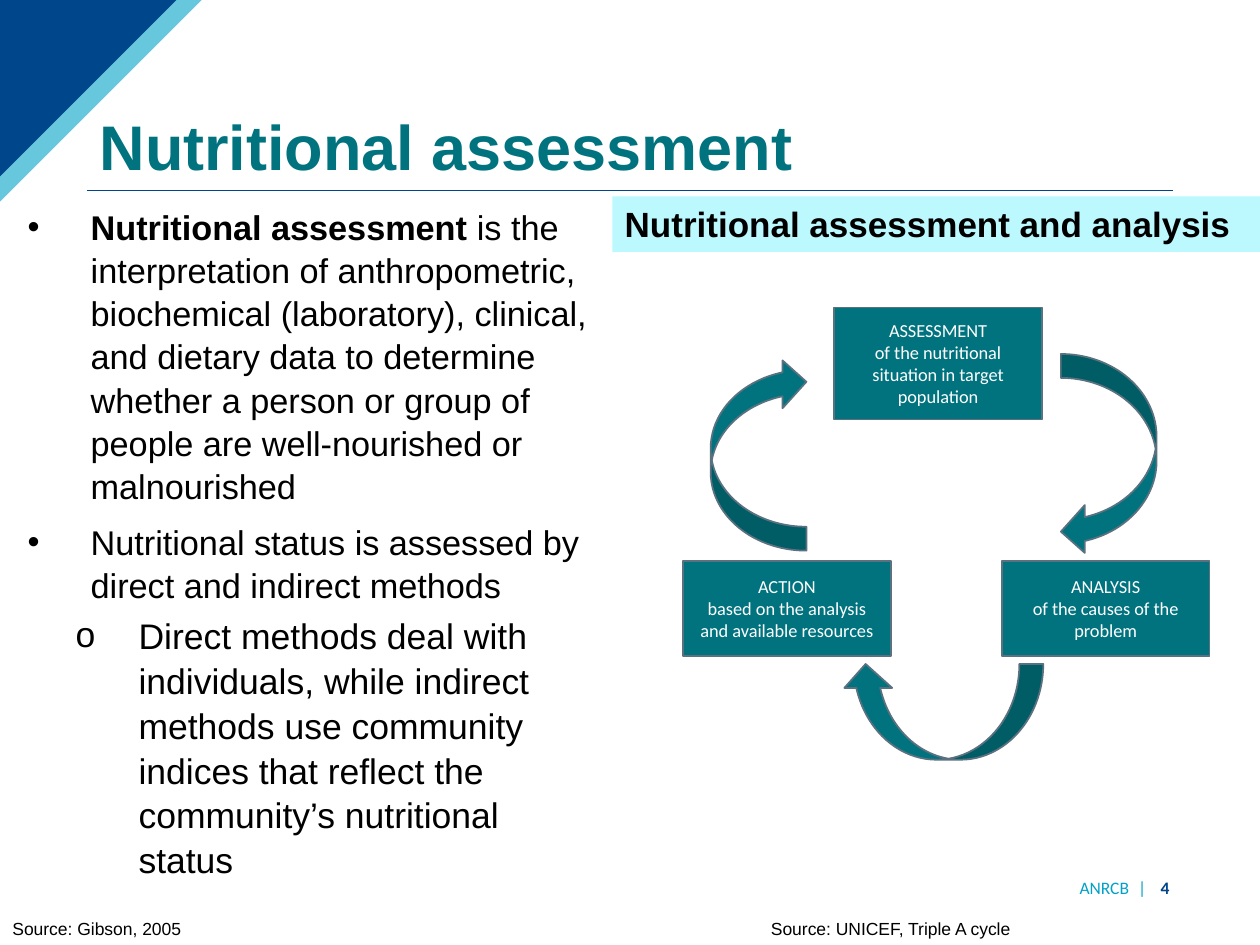
from lxml.etree import SubElement
from pptx import Presentation
from pptx.dml.color import RGBColor
from pptx.enum.shapes import MSO_CONNECTOR, MSO_SHAPE
from pptx.enum.text import MSO_ANCHOR, MSO_AUTO_SIZE, PP_ALIGN
from pptx.oxml.ns import qn
from pptx.util import Inches, Pt

COLORS = {
    "teal": "00737F", "navy": "00468B", "sky": "00A2C7", "slate": "5A717F",
    "aqua": "BBF9FF", "black": "000000", "white": "FFFFFF",
}
COLUMNS, ROWS = 100, 75


class SlideBuilder:
    """Draws styled elements on one slide, placed on a grid of 100 columns by 75 rows."""

    def __init__(self, presentation):
        self.unit_x = presentation.slide_width / COLUMNS
        self.unit_y = presentation.slide_height / ROWS
        self.slide = presentation.slides.add_slide(presentation.slide_layouts[1])
        self.shapes = self.slide.shapes

    def box(self, left, top, width, height):
        return (round(left * self.unit_x), round(top * self.unit_y),
                round(width * self.unit_x), round(height * self.unit_y))

    def place(self, shape, area):
        shape.left, shape.top, shape.width, shape.height = self.box(*area)

    def style_font(self, font, size, color, name="Arial", bold=False):
        font.size, font.name, font.bold = Pt(size), name, bold
        font.color.rgb = RGBColor.from_string(COLORS[color])

    def paint(self, shape, fill, line=None):
        shape.shadow.inherit = False
        shape.fill.solid()
        shape.fill.fore_color.rgb = RGBColor.from_string(COLORS[fill])
        if line:
            shape.line.color.rgb = RGBColor.from_string(COLORS[line])
            shape.line.width = Pt(1)
        else:
            shape.line.fill.background()

    def corner(self, width, height, color, opacity=100):
        outline = self.shapes.build_freeform(0, 0, scale=(self.unit_x, self.unit_y))
        outline.add_line_segments([(width, 0), (0, height)], close=True)
        shape = outline.convert_to_shape()
        self.paint(shape, color)
        if opacity < 100:
            fill_color = shape._element.spPr.find(qn("a:solidFill"))[0]
            SubElement(fill_color, qn("a:alpha"), val=str(opacity * 1000))

    def rule(self, left, right, row, color):
        start_x, y, end_x, _ = self.box(left, row, right, 0)
        line = self.shapes.add_connector(MSO_CONNECTOR.STRAIGHT, start_x, y, end_x, y)
        line.line.color.rgb = RGBColor.from_string(COLORS[color])
        line.line.width = Pt(0.75)
        SubElement(line._element.spPr, qn("a:effectLst"))

    def title(self, area, text):
        shape = self.shapes.title
        self.place(shape, area)
        frame = shape.text_frame
        frame.text = text
        frame.auto_size = MSO_AUTO_SIZE.NONE
        frame.vertical_anchor = MSO_ANCHOR.BOTTOM
        paragraph = frame.paragraphs[0]
        paragraph.alignment, paragraph.line_spacing = PP_ALIGN.LEFT, 0.9
        self.style_font(paragraph.font, 36, "teal", bold=True)

    def bullets(self, area, items):
        shape = self.slide.placeholders[1]
        self.place(shape, area)
        frame = shape.text_frame
        frame.auto_size = MSO_AUTO_SIZE.NONE
        styles = [("•", 0.5, 19.6, 7.5), ("o", 0.88, 20.3, 3.8)]
        for index, (level, lead, text) in enumerate(items):
            paragraph = frame.add_paragraph() if index else frame.paragraphs[0]
            mark, indent, size, space = styles[level]
            paragraph.level, paragraph.line_spacing = level, 1.05
            paragraph.space_before = Pt(space)
            self.style_font(paragraph.font, size, "black")
            if lead:
                run = paragraph.add_run()
                run.text, run.font.bold = lead, True
            paragraph.add_run().text = text
            properties = paragraph._p.get_or_add_pPr()
            properties.set("marL", str(Inches(indent)))
            properties.set("indent", str(Inches(-0.5)))
            bullet_font = SubElement(properties, qn("a:buFont"), typeface="Arial")
            bullet = SubElement(properties, qn("a:buChar"), char=mark)
            properties.find(qn("a:defRPr")).addprevious(bullet_font)
            bullet_font.addnext(bullet)

    def note(self, area, text):
        frame = self.shapes.add_textbox(*self.box(*area)).text_frame
        frame.word_wrap, frame.text = True, text
        self.style_font(frame.paragraphs[0].font, 10, "black")

    def footer(self, area, label, number):
        frame = self.shapes.add_textbox(*self.box(*area)).text_frame
        frame.word_wrap, frame.vertical_anchor = True, MSO_ANCHOR.MIDDLE
        paragraph = frame.paragraphs[0]
        paragraph.alignment = PP_ALIGN.RIGHT
        for text, color in [(label, "sky"), (" | ", "sky"), (number, "navy")]:
            run = paragraph.add_run()
            run.text = text
            self.style_font(run.font, 10, color, "Calibri", color == "navy")
            if text == " | ":
                run.font._element.set("spc", "300")

    def banner(self, area, text):
        shape = self.shapes.add_shape(MSO_SHAPE.RECTANGLE, *self.box(*area))
        self.paint(shape, "aqua")
        frame = shape.text_frame
        frame.text, frame.vertical_anchor = text, MSO_ANCHOR.TOP
        paragraph = frame.paragraphs[0]
        paragraph.alignment = PP_ALIGN.LEFT
        self.style_font(paragraph.font, 20, "black", bold=True)

    def step(self, area, heading, detail):
        shape = self.shapes.add_shape(MSO_SHAPE.RECTANGLE, *self.box(*area))
        self.paint(shape, "teal", "slate")
        frame = shape.text_frame
        frame.text = f"{heading}\n{detail}"
        frame.vertical_anchor = MSO_ANCHOR.MIDDLE
        for paragraph in frame.paragraphs:
            paragraph.alignment = PP_ALIGN.CENTER
            self.style_font(paragraph.font, 10.5, "white", "Calibri")

    def cycle_arrow(self, area, rotation):
        shape = self.shapes.add_shape(MSO_SHAPE.CURVED_LEFT_ARROW, *self.box(*area))
        self.paint(shape, "teal", "slate")
        shape.rotation = rotation


def main():
    presentation = Presentation()
    presentation.slide_width, presentation.slide_height = Inches(10), Inches(7.5)
    builder = SlideBuilder(presentation)

    builder.rule(6.9, 93.1, 15.1, "navy")
    builder.corner(16.2, 16.4, "sky", 60)
    builder.corner(13.7, 13.9, "navy")
    builder.title((6.9, 4, 86.2, 11.1), "Nutritional assessment")
    builder.bullets((1.2, 15.7, 46.6, 55.8), [
        (0, "Nutritional assessment",
         " is the interpretation of anthropometric, biochemical (laboratory), clinical, "
         "and dietary data to determine whether a person or group of people are "
         "well-nourished or malnourished"),
        (0, "", "Nutritional status is assessed by direct and indirect methods"),
        (1, "", "Direct methods deal with individuals, while indirect methods use "
                "community indices that reflect the community’s nutritional status"),
    ])
    builder.footer((77.3, 69.4, 16.5, 2.1), "ANRCB", "4")

    for left, top, height, heading, detail in [
        (66.2, 24.4, 8.9, "ASSESSMENT", "of the nutritional situation in target population"),
        (54.2, 44.5, 7.6, "ACTION", "based on the analysis and available resources"),
        (79.5, 44.5, 7.6, "ANALYSIS", "of the causes of the problem"),
    ]:
        builder.step((left, top, 16.5, height), heading, detail)
    for left, top, height, rotation in [
        (84.2, 28.1, 16, 0), (71, 48.5, 16, 90), (56.4, 28.4, 15.3, 180),
    ]:
        builder.cycle_arrow((left, top, 7.6, height), rotation)

    builder.banner((48.6, 15.6, 51.4, 4.4), "Nutritional assessment and analysis")
    for left, source in [(0, "Gibson, 2005"), (60.2, "UNICEF, Triple A cycle")]:
        builder.note((left, 72.4, 28.8, 5.8), f"Source: {source}")
    presentation.save("out.pptx")


if __name__ == "__main__":
    main()
